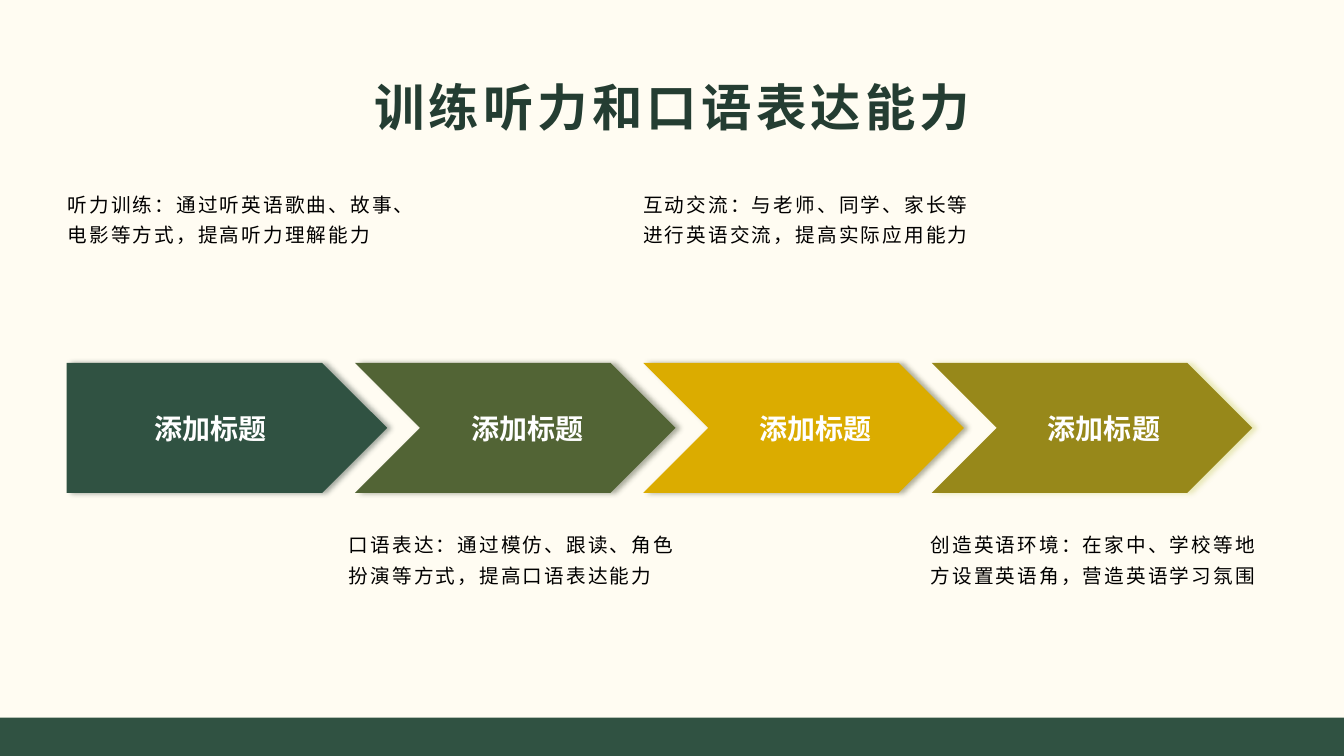
import pptx
import pptx.dml.color
import pptx.enum.shapes
import pptx.enum.text
import pptx.oxml
import pptx.oxml.ns
import pptx.util
from dataclasses import dataclass

Inches = pptx.util.Inches
MSO_SHAPE = pptx.enum.shapes.MSO_SHAPE
PP_ALIGN = pptx.enum.text.PP_ALIGN
MSO_ANCHOR = pptx.enum.text.MSO_ANCHOR
rgb = pptx.dml.color.RGBColor.from_string


@dataclass(frozen=True)
class Theme:
    font: str = "Noto Sans CJK SC"
    background: str = "FFFCF2"
    bar: str = "305242"
    title: str = "243D32"
    label: str = "FFFFFF"
    body: str = "000000"
    title_size: int = 36
    label_size: int = 20
    body_size: int = 14


theme = Theme()


def style_paragraph(paragraph, size, color, bold, spacing, alignment):
    paragraph.alignment = alignment
    font = paragraph.font
    font.name = theme.font
    font.size = pptx.util.Pt(size)
    font.bold = bold
    font.color.rgb = rgb(color)
    properties = paragraph._p.pPr.find(pptx.oxml.ns.qn("a:defRPr"))
    properties.set("spc", str(int(spacing * 100)))
    latin = properties.find(pptx.oxml.ns.qn("a:latin"))
    latin.addnext(pptx.oxml.parse_xml(
        f'<a:ea {pptx.oxml.ns.nsdecls("a")} typeface="{theme.font}"/>'))


def add_filled_shape(kind, left, top, width, height, color):
    shape = slide.shapes.add_shape(
        kind, Inches(left), Inches(top), Inches(width), Inches(height))
    shape.shadow.inherit = False
    shape.fill.solid()
    shape.fill.fore_color.rgb = rgb(color)
    shape.line.fill.background()
    return shape


presentation = pptx.Presentation()
presentation.slide_width = Inches(13.33)
presentation.slide_height = Inches(7.5)
slide = presentation.slides.add_slide(presentation.slide_layouts[5])
slide.background.fill.solid()
slide.background.fill.fore_color.rgb = rgb(theme.background)

add_filled_shape(MSO_SHAPE.RECTANGLE, 0, 7.12, 13.33, 0.38, theme.bar)

title = slide.shapes.title
title.left, title.top = Inches(0.67), Inches(0.67)
title.width, title.height = Inches(12), Inches(0.77)
title.text_frame.text = "训练听力和口语表达能力"
title.text_frame.auto_size = pptx.enum.text.MSO_AUTO_SIZE.NONE
title.text_frame.vertical_anchor = MSO_ANCHOR.MIDDLE
style_paragraph(title.text_frame.paragraphs[0], theme.title_size, theme.title,
                True, 3, PP_ALIGN.CENTER)

steps = [
    ("305242", "182921", 0.67, 1.79, 1.55,
     "听力训练：通过听英语歌曲、故事、电影等方式，提高听力理解能力"),
    ("526435", "29321A", 3.46, 5.17, 1.5,
     "口语表达：通过模仿、跟读、角色扮演等方式，提高口语表达能力"),
    ("DBAC00", "3A3B14", 6.38, 1.79, 1.55,
     "互动交流：与老师、同学、家长等进行英语交流，提高实际应用能力"),
    ("97881A", "C7CA61", 9.23, 5.17, 1.5,
     "创造英语环境：在家中、学校等地方设置英语角，营造英语学习氛围"),
]

for index, (color, shadow, left, top, height, description) in enumerate(steps):
    kind = MSO_SHAPE.CHEVRON if index else MSO_SHAPE.PENTAGON
    arrow = add_filled_shape(kind, 0.66 + 2.86 * index, 3.6, 3.18, 1.29, color)
    effects = arrow._element.spPr.find(pptx.oxml.ns.qn("a:effectLst"))
    effects.append(pptx.oxml.parse_xml(
        f'<a:outerShdw {pptx.oxml.ns.nsdecls("a")} blurRad="{pptx.util.Pt(4)}" '
        f'dist="{pptx.util.Pt(3)}" dir="0" algn="l" rotWithShape="0">'
        f'<a:srgbClr val="{shadow}"><a:alpha val="40000"/></a:srgbClr></a:outerShdw>'))
    frame = arrow.text_frame
    frame.text = "添加标题"
    frame.vertical_anchor = MSO_ANCHOR.MIDDLE
    if index:
        frame.margin_left, frame.margin_right = Inches(0.24), 0
    style_paragraph(frame.paragraphs[0], theme.label_size, theme.label,
                    True, 0, PP_ALIGN.CENTER)

    frame = slide.shapes.add_textbox(
        Inches(left), Inches(top), Inches(3.43), Inches(height)).text_frame
    frame.word_wrap = True
    frame.margin_left = 0
    frame.text = description
    paragraph = frame.paragraphs[0]
    paragraph.line_spacing = 1.3
    paragraph.space_after = pptx.util.Pt(10)
    style_paragraph(paragraph, theme.body_size, theme.body,
                    False, 1.5, PP_ALIGN.LEFT)

presentation.save("out.pptx")
